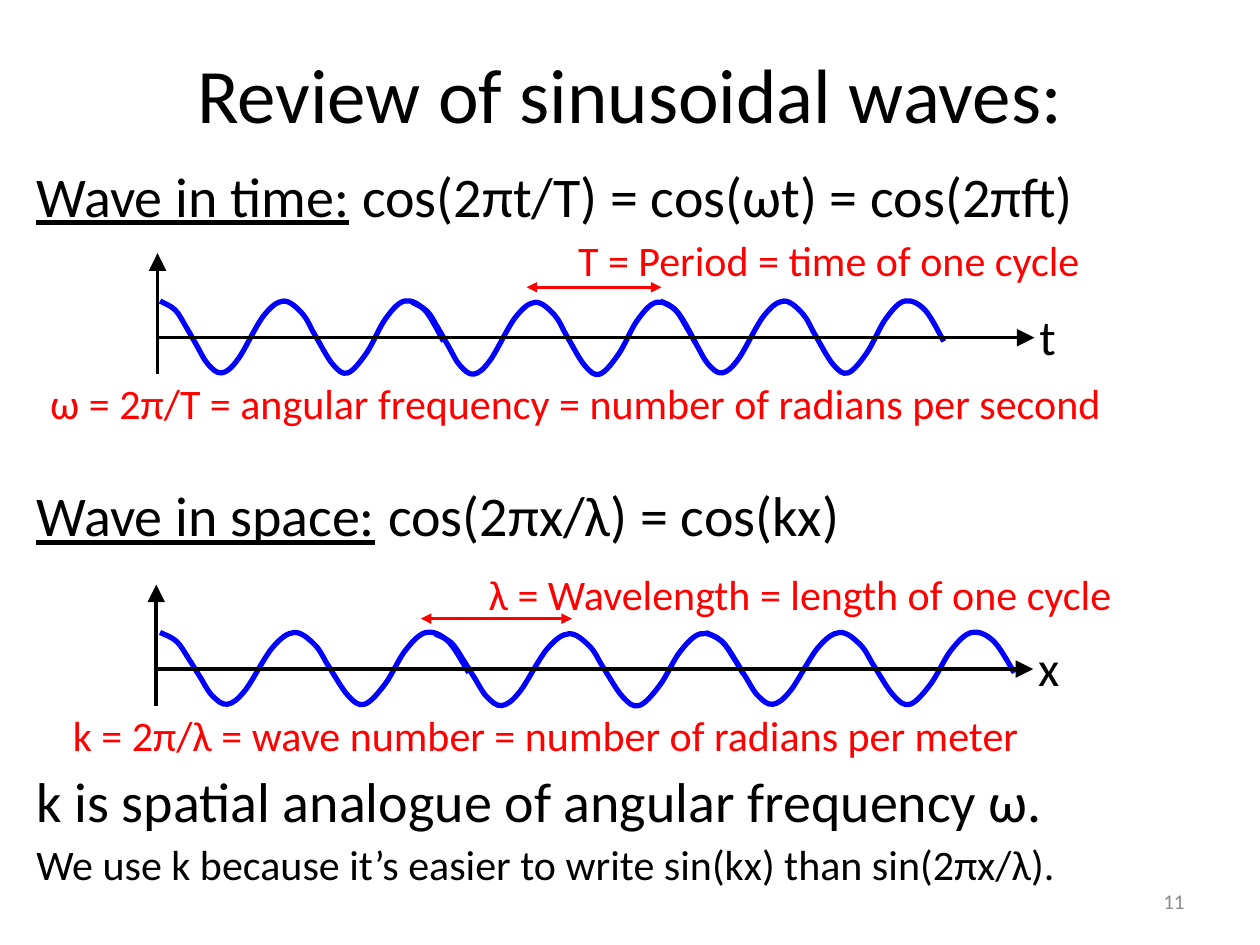
from lxml import etree
from pptx import Presentation
from pptx.dml.color import RGBColor
from pptx.enum.shapes import MSO_CONNECTOR
from pptx.enum.text import MSO_ANCHOR, PP_ALIGN
from pptx.oxml.ns import qn
from pptx.util import Inches, Pt

LINE = MSO_CONNECTOR.STRAIGHT
TOP, MID = MSO_ANCHOR.TOP, MSO_ANCHOR.MIDDLE
LEFT, CENTER, RIGHT = PP_ALIGN.LEFT, PP_ALIGN.CENTER, PP_ALIGN.RIGHT
BLACK, RED, BLUE, GRAY = "000000", "FF0000", "0000FF", "8C8C8C"

deck = Presentation()
deck.slide_width, deck.slide_height = Inches(10), Inches(7.5)
cell = deck.slide_width // 100
slide = deck.slides.add_slide(deck.slide_layouts[6])
shapes = slide.shapes


def write(lines, x, y, w, h, color=BLACK, align=LEFT, anchor=TOP, wrap=True, pitch=1):
    box = shapes.add_textbox(*(round(n * cell) for n in (x, y, w, h)))
    frame = box.text_frame
    frame.word_wrap = wrap
    frame.vertical_anchor = anchor
    for i, (head, words, size, gap) in enumerate(lines):
        para = frame.add_paragraph() if i else frame.paragraphs[0]
        para.alignment = align
        para.line_spacing = pitch
        para.space_before = Pt(gap)
        para.text = head or words
        if head:
            para.runs[0].font.underline = True
            para.add_run().text = words
        for run in para.runs:
            run.font.name = "Calibri"
            run.font.size = Pt(size)
            run.font.color.rgb = RGBColor.from_string(color)


def arrow(x1, y1, x2, y2, color, ends, size):
    link = shapes.add_connector(LINE, *(round(n * cell) for n in (x1, y1, x2, y2)))
    link.line.width = Pt(2)
    link.line.color.rgb = RGBColor.from_string(color)
    edge = link.line._get_or_add_ln()
    for end in ends:
        etree.SubElement(edge, qn(f"a:{end}"), type="triangle", w=size, len=size)
    etree.SubElement(link._element.spPr, qn("a:effectLst"))


write([("", "11", 12, 0)], 71.7, 69.5, 23.3, 4, GRAY, RIGHT, MID)
write([("", "Review of sinusoidal waves:", 44, 0)], 5, 3, 90, 8.7, BLACK, CENTER, MID)
write([
    ("Wave in time:", " cos(2πt/T) = cos(ωt) = cos(2πft)", 32, 0),
    ("Wave in space:", " cos(2πx/λ) = cos(kx)", 32, 148),
    ("", "k is spatial analogue of angular frequency ω.", 32, 129),
    ("", "We use k because it’s easier to write sin(kx) than sin(2πx/λ).", 24, 5),
], 1.9, 12.9, 95, 62.1, pitch=0.9)

knots = [
    (0, 2), (12, 9), (21, 23), (29, 37), (38, 52), (49, 59), (62, 48), (82, 14), (98, 2),
    (113, 12), (123, 29), (137, 52), (149, 59), (164, 43), (179, 16), (194, 2), (210, 9), (225, 34),
]
ends = [knots[0], *knots, knots[-1]]
curve = [knots[0]]
for a, b, c, d in zip(ends, ends[1:], ends[2:], ends[3:]):
    curve.append(tuple(q + (r - p) / 6 for p, q, r in zip(a, b, c)))
    curve.append(tuple(r - (s - q) / 6 for q, r, s in zip(b, c, d)))
    curve.append(c)

plots = [
    (50, 12.4, ((12.7, 0), (34.5, 0.1), (56, 0)), 24.5, (33.4, 45.4), "x",
     ("λ = Wavelength = length of one cycle", 37.8, 44.6, 56.7),
     ("k = 2π/λ = wave number = number of radians per meter", 4.8, 55.8, 83.9)),
    (23.7, 12.5, ((12.7, 0), (32.7, 0.1), (52.4, 0)), 22.5, (41.8, 52.5), "t",
     ("T = Period = time of one cycle", 44.9, 18.1, 46.3),
     ("ω = 2π/T = angular frequency = number of radians per second", 3, 29.5, 94.1)),
]
for y, x, starts, wide, span, name, *notes in plots:
    for start, drop in starts:
        points = [
            (round((start + wide * u / 225) * cell), round((y + drop + v / 10) * cell))
            for u, v in curve
        ]
        pen = shapes.build_freeform(*points[0])
        pen.add_line_segments(points[1:], close=False)
        wave = pen.convert_to_shape()
        wave.shadow.inherit = False
        wave.fill.background()
        wave.line.width = Pt(3)
        wave.line.color.rgb = RGBColor.from_string(BLUE)
        parts = list(wave._element.iter(qn("a:lnTo")))
        for trio in zip(parts[::3], parts[1::3], parts[2::3]):
            bend = etree.SubElement(trio[0].getparent(), qn("a:cubicBezTo"))
            for part in trio:
                bend.append(part[0])
                part.getparent().remove(part)
    arrow(x, y + 6, x, y - 3.6, BLACK, ["tailEnd"], "lg")
    arrow(x, y + 3.1, x + 69.6, y + 3.1, BLACK, ["tailEnd"], "lg")
    arrow(span[0], y - 0.9, span[1], y - 0.9, RED, ["headEnd", "tailEnd"], "med")
    for words, left, top, room in notes:
        write([("", words, 24, 0)], left, top, room, 5, RED, wrap=False)
    write([("", name, 28, 0)], x + 69, y + 0.1, 2.9, 5.7)

deck.save("out.pptx")
